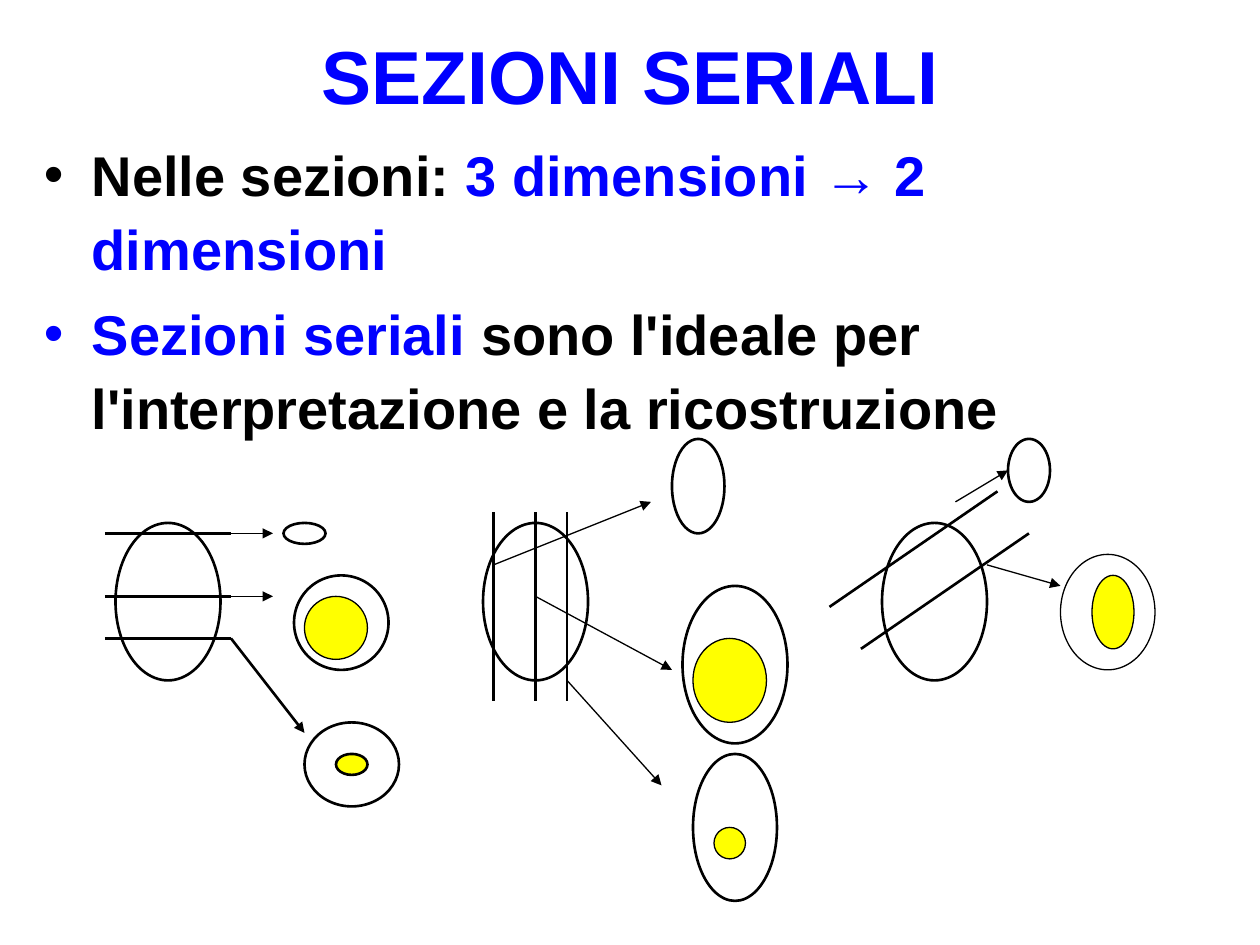
from dataclasses import dataclass

from lxml.etree import SubElement
from pptx import Presentation
from pptx.dml.color import RGBColor
from pptx.enum.shapes import MSO_CONNECTOR as Connector, MSO_SHAPE as Shape
from pptx.enum.text import MSO_ANCHOR as Anchor, PP_ALIGN as Align
from pptx.oxml.ns import qn
from pptx.util import Inches, Pt


@dataclass(frozen=True)
class Theme:
    font: str = "Arial"
    black: RGBColor = RGBColor(0, 0, 0)
    blue: RGBColor = RGBColor(0, 0, 255)
    yellow: RGBColor = RGBColor(255, 255, 0)
    title_size: Pt = Pt(42.9)
    body_size: Pt = Pt(32)
    thin: Pt = Pt(0.75)
    thick: Pt = Pt(1.5)


THEME = Theme()
UNIT = Inches(1 / 12)
CELL_SIZE = (10, 15)


def style_span(span, size, color):
    font = span.font
    font.name, font.size, font.bold = THEME.font, size, True
    font.color.rgb = color


def add_title(page, left, top, width, height):
    frame = page.shapes.add_textbox(left, top, width, height).text_frame
    frame.word_wrap = True
    frame.vertical_anchor = Anchor.MIDDLE
    para = frame.paragraphs[0]
    para.text = "SEZIONI SERIALI"
    para.alignment = Align.CENTER
    para.line_spacing = 0.9
    style_span(para.runs[0], THEME.title_size, THEME.blue)


def add_bullet(para):
    props = para._p.get_or_add_pPr()
    indent = Inches(0.38)
    props.set("marL", str(indent))
    props.set("indent", str(-indent))
    SubElement(props, qn("a:buFont"), typeface=THEME.font)
    SubElement(props, qn("a:buChar"), char="•")


def add_points(page, left, top, width, height):
    frame = page.shapes.add_textbox(left, top, width, height).text_frame
    frame.word_wrap = True
    points = [
        [("Nelle sezioni: ", THEME.black),
         ("3 dimensioni → 2 dimensioni", THEME.blue)],
        [("Sezioni seriali ", THEME.blue),
         ("sono l'ideale per l'interpretazione e la ricostruzione", THEME.black)],
    ]
    for index, parts in enumerate(points):
        para = frame.add_paragraph() if index else frame.paragraphs[0]
        add_bullet(para)
        para.line_spacing = 1.1
        if index:
            para.space_before = Pt(6.4)
        for text, color in parts:
            span = para.add_run()
            span.text = text
            style_span(span, THEME.body_size, color)


class Figure:
    """A group drawn on a grid of UNIT steps from its top left corner."""

    def __init__(self, page, left, top):
        self.shapes = page.shapes.add_group_shape().shapes
        self.left, self.top = left, top

    def place(self, x, y):
        return self.left + x * UNIT, self.top + y * UNIT

    def ellipse(self, x, y, width, height, line=THEME.thick, fill=None):
        shape = self.shapes.add_shape(
            Shape.OVAL, *self.place(x, y), width * UNIT, height * UNIT)
        shape.shadow.inherit = False
        shape.line.color.rgb = THEME.black
        shape.line.width = line
        if fill is None:
            shape.fill.background()
        else:
            shape.fill.solid()
            shape.fill.fore_color.rgb = fill

    def nucleus(self, x, y, width, height, line=THEME.thin):
        self.ellipse(x, y, width, height, line, THEME.yellow)

    def cut(self, start, end, width=THEME.thick):
        line = self.shapes.add_connector(
            Connector.STRAIGHT, *self.place(*start), *self.place(*end))
        line.line.color.rgb = THEME.black
        line.line.width = width
        SubElement(line._element.spPr, qn("a:effectLst"))
        return line

    def arrow(self, start, end, width=THEME.thin):
        line = self.cut(start, end, width)
        outline = line._element.spPr.find(qn("a:ln"))
        SubElement(outline, qn("a:tailEnd"), type="triangle")


def draw_horizontal_sections(page, left, top):
    figure = Figure(page, left, top)
    figure.ellipse(1, 8, *CELL_SIZE)
    for y in (9, 15, 19):
        figure.cut((0, y), (12, y))
    for y in (9, 15):
        figure.arrow((12, y), (16, y))
    figure.arrow((12, 19), (19, 28), THEME.thick)
    figure.ellipse(17, 8, 4, 2)
    figure.ellipse(18, 13, 9, 9)
    figure.nucleus(19, 15, 6, 6)
    figure.ellipse(19, 27, 9, 8)
    figure.nucleus(22, 30, 3, 2, THEME.thick)


def draw_vertical_sections(page, left, top):
    figure = Figure(page, left, top)
    figure.ellipse(0, 8, *CELL_SIZE)
    for x, start_y, end in ((1, 12, (16, 6)), (5, 15, (18, 22)), (8, 23, (17, 33))):
        figure.cut((x, 7), (x, 25))
        figure.arrow((x, start_y), end)
    figure.ellipse(18, 0, 5, 9)
    figure.ellipse(19, 14, *CELL_SIZE)
    figure.nucleus(20, 19, 7, 8)
    figure.ellipse(20, 30, 8, 14)
    figure.nucleus(22, 37, 3, 3)


def draw_oblique_sections(page, left, top):
    figure = Figure(page, left, top)
    figure.ellipse(5, 8, *CELL_SIZE)
    for x, y in ((16, 5), (19, 9)):
        figure.cut((x, y), (x - 16, y + 11))
    figure.arrow((12, 6), (17, 3))
    figure.arrow((15, 12), (22, 14))
    figure.ellipse(17, 0, 4, 6)
    figure.ellipse(22, 11, 9, 11, THEME.thin)
    figure.nucleus(25, 13, 4, 7)


def main():
    deck = Presentation()
    deck.slide_width, deck.slide_height = Inches(10), Inches(7.5)
    page = deck.slides.add_slide(deck.slide_layouts[6])
    add_points(page, Inches(0.25), Inches(1.01), Inches(9.5), Inches(2.57))
    figures_top = Inches(41.8 / 12)
    draw_horizontal_sections(page, 10 * UNIT, figures_top)
    draw_vertical_sections(page, 46 * UNIT, figures_top)
    draw_oblique_sections(page, 79 * UNIT, figures_top)
    add_title(page, 0, Inches(0.25), deck.slide_width, Inches(0.77))
    deck.save("out.pptx")


if __name__ == "__main__":
    main()
